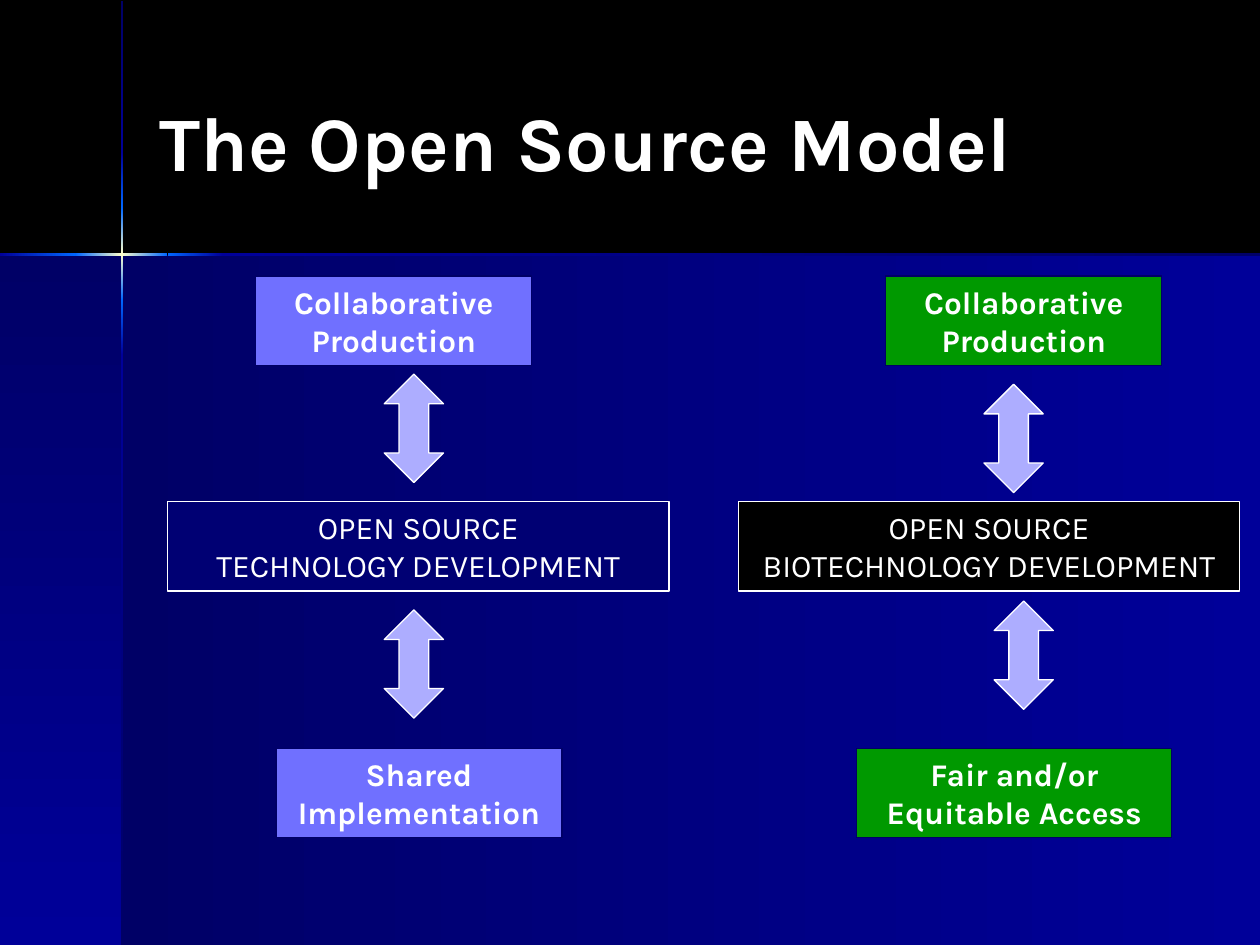
from copy import deepcopy

from pptx import Presentation
from pptx.dml.color import RGBColor
from pptx.enum.shapes import MSO_SHAPE
from pptx.enum.text import MSO_ANCHOR, PP_ALIGN
from pptx.util import Inches, Pt

WIDTH, HEIGHT = 10, 7.5
CROSS_X, CROSS_Y = 0.97, 2.02
BEAM = 0.02
FONT = "Karla"
NAVY, BLUE, BRIGHT, GLOW = "000066", "000099", "0066FF", "FFFFCC"
WHITE, BLACK = "FFFFFF", "000000"
COLUMN_WIDTH, BOX_HEIGHT = 3.98, 0.71
ARROW_WIDTH, ARROW_HEIGHT = 0.47, 0.86
PRODUCTION_Y, MODEL_Y, RESULT_Y = 2.19, 3.98, 5.94


def rgb(color):
    return RGBColor.from_string(color)


def add_plain(slide, kind, box):
    shape = slide.shapes.add_shape(kind, *map(Inches, box))
    shape.shadow.inherit = False
    return shape


def add_gradient(slide, box, colors, vertical=False):
    panel = add_plain(slide, MSO_SHAPE.RECTANGLE, box)
    panel.line.fill.background()
    panel.fill.gradient()
    panel.fill.gradient_angle = 270 if vertical else 0
    stop_list = panel._element.spPr.find(".//{*}gsLst")
    for _ in colors[2:]:
        stop_list.append(deepcopy(stop_list[0]))
    for i, (stop, color) in enumerate(zip(panel.fill.gradient_stops, colors)):
        stop.position = i / (len(colors) - 1)
        stop.color.rgb = rgb(color)


def add_backdrop(slide):
    """Two gradient panels with a glowing cross where they meet."""
    background = slide.background.fill
    background.solid()
    background.fore_color.rgb = rgb(BLACK)

    depth = HEIGHT - CROSS_Y
    add_gradient(slide, (CROSS_X, CROSS_Y, WIDTH - CROSS_X, depth), (NAVY, BLUE))
    add_gradient(slide, (0, CROSS_Y, CROSS_X, depth), (NAVY, BLUE), vertical=True)

    glow = (BRIGHT, GLOW, BRIGHT)
    upright = [(0.01, 1.21, (NAVY, BLUE)), (1.21, 1.65, (BLUE, BRIGHT)),
               (1.65, 2.38, glow), (2.38, 2.82, (BRIGHT, BLUE)),
               (2.82, HEIGHT, (BLUE, NAVY))]
    for top, bottom, colors in upright:
        add_gradient(slide, (CROSS_X - BEAM / 2, top, BEAM, bottom - top),
                     colors, vertical=True)

    level = [(0, 0.6, (BLUE, BRIGHT)), (0.6, 1.33, glow),
             (1.33, 1.77, (BRIGHT, BLUE)), (1.77, WIDTH, (BLUE, NAVY))]
    for left, right, colors in level:
        add_gradient(slide, (left, CROSS_Y - BEAM / 2, right - left, BEAM), colors)


def style_text(frame, size, bold, alignment):
    frame.word_wrap = True
    frame.vertical_anchor = MSO_ANCHOR.MIDDLE
    for paragraph in frame.paragraphs:
        paragraph.alignment = alignment
        for run in paragraph.runs:
            run.font.name = FONT
            run.font.size = Pt(size)
            run.font.bold = bold
            run.font.color.rgb = rgb(WHITE)


def add_title(slide, box, title):
    frame = slide.shapes.add_textbox(*map(Inches, box)).text_frame
    frame.text = title
    style_text(frame, 44, True, PP_ALIGN.LEFT)


def add_filled(slide, kind, box, fill, line):
    shape = add_plain(slide, kind, box)
    shape.fill.solid()
    shape.fill.fore_color.rgb = rgb(fill)
    shape.line.color.rgb = rgb(line)
    shape.line.width = Pt(0.75)
    return shape


def add_label(slide, box, text, fill, line, bold):
    label = add_filled(slide, MSO_SHAPE.RECTANGLE, box, fill, line)
    label.text_frame.text = text
    style_text(label.text_frame, 18, bold, PP_ALIGN.CENTER)


def add_model(slide, left, model, model_fill, accent, production, result, arrows):
    """One column; production and result are (offset, width, text)."""
    add_label(slide, (left, MODEL_Y, COLUMN_WIDTH, BOX_HEIGHT), model,
              model_fill, WHITE, bold=False)
    for top, (offset, width, text) in ((PRODUCTION_Y, production),
                                       (RESULT_Y, result)):
        add_label(slide, (left + offset, top, width, BOX_HEIGHT), text,
                  accent, NAVY, bold=True)
    for offset, top in arrows:
        add_filled(slide, MSO_SHAPE.UP_DOWN_ARROW,
                   (left + offset, top, ARROW_WIDTH, ARROW_HEIGHT),
                   "ADADFF", WHITE)


def main():
    prs = Presentation()
    prs.slide_width, prs.slide_height = Inches(WIDTH), Inches(HEIGHT)
    slide = prs.slides.add_slide(prs.slide_layouts[6])
    add_backdrop(slide)
    add_title(slide, (1.17, 0.33, 8.25, 1.57), "The Open Source Model")
    add_model(slide, 1.33, "OPEN SOURCE\nTECHNOLOGY DEVELOPMENT", "000073", "7070FF",
              production=(0.7, 2.19, "Collaborative Production"),
              result=(0.86, 2.27, "Shared Implementation"),
              arrows=((1.72, 2.97), (1.72, 4.84)))
    add_model(slide, 5.86, "OPEN SOURCE\nBIOTECHNOLOGY DEVELOPMENT", BLACK, "009900",
              production=(1.17, 2.19, "Collaborative Production"),
              result=(0.94, 2.5, "Fair and/or Equitable Access"),
              arrows=((1.95, 3.05), (2.03, 4.77)))
    prs.save("out.pptx")


if __name__ == "__main__":
    main()
